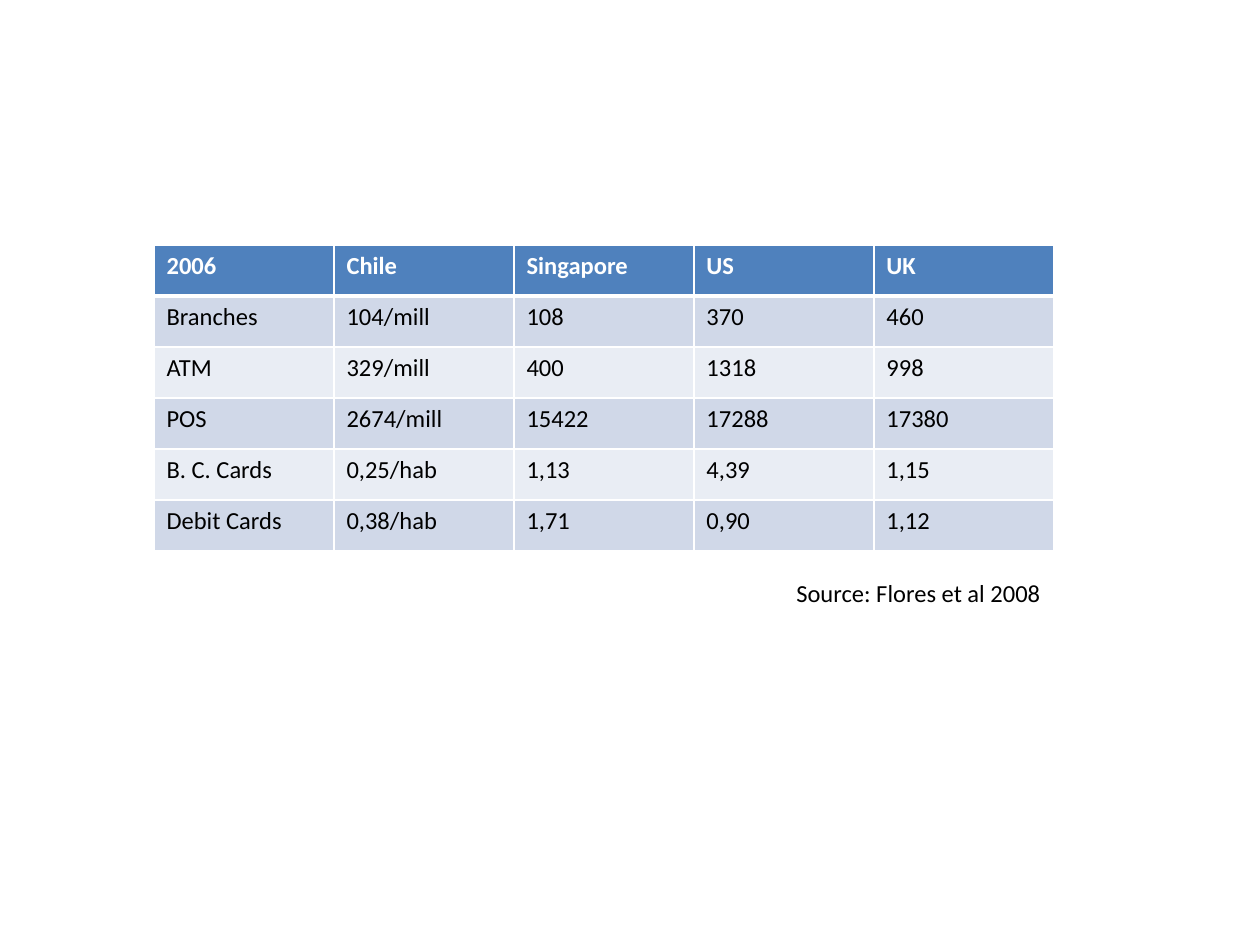
from dataclasses import dataclass

from lxml import etree
from pptx import Presentation
from pptx import util as u
from pptx.dml import color
from pptx.enum import text
from pptx.oxml import ns

EMU_PER_PX = 914400 / 126

CARD_STATISTICS = [
    ["2006", "Chile", "Singapore", "US", "UK"],
    ["Branches", "104/mill", "108", "370", "460"],
    ["ATM", "329/mill", "400", "1318", "998"],
    ["POS", "2674/mill", "15422", "17288", "17380"],
    ["B. C. Cards", "0,25/hab", "1,13", "4,39", "1,15"],
    ["Debit Cards", "0,38/hab", "1,71", "0,90", "1,12"],
]


@dataclass(frozen=True)
class Theme:
    """Colours, type and line widths of the slide."""

    font: str = "Calibri"
    size: int = 14
    ink: str = "000000"
    paper: str = "FFFFFF"
    header: str = "4F81BD"
    bands: tuple = ("D0D8E8", "E9EDF4")
    thin: int = 1
    thick: int = 3


def px(length):
    """Turn pixels into EMU."""
    return u.Emu(round(length * EMU_PER_PX))


class SlideBuilder:
    """Draws elements on one slide in one theme."""

    def __init__(self, slide, theme):
        """Keep the slide and its theme."""
        self.slide = slide
        self.theme = theme

    def set_text(self, frame, words, ink, bold=False, alignment=text.PP_ALIGN.LEFT):
        """Put one formatted paragraph in a text frame."""
        frame.text = words
        paragraph = frame.paragraphs[0]
        paragraph.alignment = alignment
        font = paragraph.runs[0].font
        font.name = self.theme.font
        font.size = u.Pt(self.theme.size)
        font.bold = bold
        font.color.rgb = color.RGBColor.from_string(ink)

    def borders(self, cell, top, bottom):
        """Draw the four cell borders ahead of the cell fill."""
        properties = cell._tc.get_or_add_tcPr()
        thin = self.theme.thin
        widths = {"lnL": thin, "lnR": thin, "lnT": top, "lnB": bottom}
        for index, (side, width) in enumerate(widths.items()):
            line = etree.Element(ns.qn(f"a:{side}"), w=str(int(u.Pt(width))))
            fill = etree.SubElement(line, ns.qn("a:solidFill"))
            etree.SubElement(fill, ns.qn("a:srgbClr"), val=self.theme.paper)
            properties.insert(index, line)

    def table(self, rows, left, top, column_width, row_height):
        """Add a banded table with a header row."""
        theme = self.theme
        column_count = len(rows[0])
        table = self.slide.shapes.add_table(
            len(rows), column_count, px(left), px(top),
            px(column_width * column_count), px(row_height * len(rows)),
        ).table
        for column in table.columns:
            column.width = px(column_width)
        for row_index, values in enumerate(rows):
            table.rows[row_index].height = px(row_height)
            is_header = row_index == 0
            fill = theme.header if is_header else theme.bands[(row_index - 1) % 2]
            ink = theme.paper if is_header else theme.ink
            upper = theme.thick if row_index == 1 else theme.thin
            lower = theme.thick if is_header else theme.thin
            for column_index, value in enumerate(values):
                cell = table.cell(row_index, column_index)
                cell.fill.solid()
                cell.fill.fore_color.rgb = color.RGBColor.from_string(fill)
                self.set_text(cell.text_frame, value, ink, is_header)
                self.borders(cell, upper, lower)

    def label(self, words, left, top, width, height):
        """Add a right-aligned text box."""
        shape = self.slide.shapes.add_textbox(px(left), px(top), px(width), px(height))
        shape.text_frame.word_wrap = True
        shape.text_frame.auto_size = text.MSO_AUTO_SIZE.SHAPE_TO_FIT_TEXT
        self.set_text(shape.text_frame, words, self.theme.ink, alignment=text.PP_ALIGN.RIGHT)


def main():
    """Build and save the presentation."""
    presentation = Presentation()
    presentation.slide_width = px(1260)
    presentation.slide_height = px(945)
    slide = presentation.slides.add_slide(presentation.slide_layouts[6])
    builder = SlideBuilder(slide, Theme())
    builder.table(CARD_STATISTICS, left=154, top=245, column_width=180, row_height=51)
    builder.label("Source: Flores et al 2008", left=650, top=572, width=403, height=43)
    presentation.save("out.pptx")


if __name__ == "__main__":
    main()
